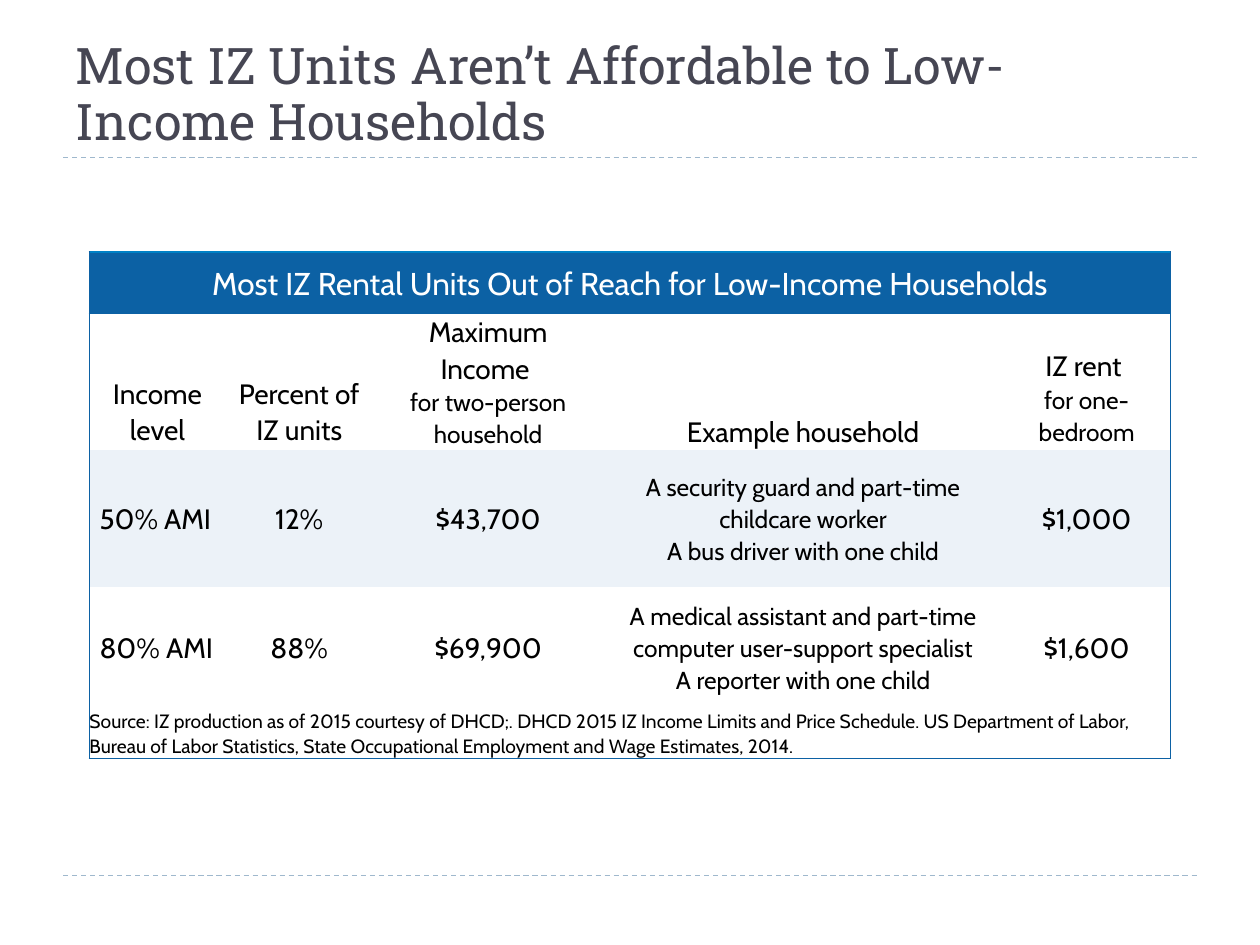
from lxml.etree import SubElement
from pptx import Presentation
from pptx.dml.color import RGBColor
from pptx.enum.dml import MSO_LINE
from pptx.enum.shapes import MSO_CONNECTOR
from pptx.enum.text import MSO_ANCHOR as Anchor, MSO_AUTO_SIZE, PP_ALIGN as Align
from pptx.oxml.ns import qn
from pptx.util import Inches, Pt

COLORS = {"title": "464653", "rule": "9FB8CD", "blue": "0C61A4", "top": "0081C6",
          "band": "ECF2F8", "text": "000000", "white": "FFFFFF"}
HEADLINE = "Most IZ Units Aren’t Affordable to Low-Income Households"
CAPTION = "Most IZ Rental Units Out of Reach for Low-Income Households"
SOURCE = ("Source: IZ production as of 2015 courtesy of DHCD;. DHCD 2015 IZ Income Limits "
          "and Price Schedule. US Department of Labor, Bureau of Labor Statistics, State "
          "Occupational Employment and Wage Estimates, 2014.")
HEADINGS = [
    [("Income level", 16)],
    [("Percent of IZ units", 16)],
    [("Maximum", 16), ("Income ", 16), ("for two-person household", 14)],
    [("Example household", 16)],
    [("IZ rent ", 16), ("for one-bedroom", 14)],
]
LEVELS = [
    ("50% AMI", "12%", "$43,700",
     ["A security guard and part-time childcare worker", "A bus driver with one child"],
     "$1,000"),
    ("80% AMI", "88%", "$69,900",
     ["A medical assistant and part-time computer user-support specialist",
      "A reporter with one child"],
     "$1,600"),
]
COLUMN_WIDTHS = [1.08, 1.17, 1.83, 3.17, 1.33]
ROW_HEIGHTS = [0.49, 0.66, 1.09, 0.96, 0.19]
LAST_COLUMN, LAST_ROW = len(COLUMN_WIDTHS) - 1, len(ROW_HEIGHTS) - 1
NONE, PADDED, SIDES = (0, 0), (0.08, 0.02), (0.08, 0)
HEADING_INSETS = [PADDED, PADDED, NONE, NONE, PADDED]
LEVEL_INSETS = [PADDED, PADDED, NONE, SIDES, PADDED]


def rgb(name):
    return RGBColor.from_string(COLORS[name])


def assign(target, values):
    for key, value in values.items():
        setattr(target, key, value)


def style_text(paragraph, text, size, color, font, **layout):
    assign(paragraph, layout)
    run = paragraph.add_run()
    run.text = text
    assign(run.font, {"size": Pt(size), "name": font})
    run.font.color.rgb = rgb(color)


def set_borders(cell, borders):
    properties = cell._tc.get_or_add_tcPr()
    for side in "LRTB":
        edge = SubElement(properties, qn(f"a:ln{side}"), w=str(Pt(1)))
        if side in borders:
            fill = SubElement(edge, qn("a:solidFill"))
            SubElement(fill, qn("a:srgbClr"), val=COLORS[borders[side]])
        else:
            SubElement(edge, qn("a:noFill"))


def fill_cell(cell, lines, insets=NONE, anchor=Anchor.MIDDLE, align=Align.CENTER,
              color="text"):
    across, down = map(Inches, insets)
    assign(cell, {"margin_left": across, "margin_right": across, "margin_top": down,
                  "margin_bottom": down, "vertical_anchor": anchor})
    for number, (text, size) in enumerate(lines):
        frame = cell.text_frame
        paragraph = frame.add_paragraph() if number else frame.paragraphs[0]
        style_text(paragraph, text, size, color, "Cabin",
                   alignment=align, line_spacing=1.07)


def frame_cell(cell, row, column):
    spans = row in (0, LAST_ROW)
    borders = {}
    if column == 0:
        borders["L"] = "blue"
    if column == LAST_COLUMN or spans:
        borders["R"] = "blue"
    if row < 2:
        borders["T"] = "blue" if row else "top"
    if spans:
        borders["B"] = "blue"
    set_borders(cell, borders)
    background = {0: "blue", 2: "band"}.get(row)
    if background:
        cell.fill.solid()
        cell.fill.fore_color.rgb = rgb(background)
    else:
        cell.fill.background()


def add_rule(slide, y):
    rule = slide.shapes.add_connector(MSO_CONNECTOR.STRAIGHT, Inches(0.5), Inches(y),
                                      Inches(9.5), Inches(y))
    assign(rule.line, {"width": Pt(0.75), "dash_style": MSO_LINE.DASH})
    rule.line.color.rgb = rgb("rule")
    SubElement(rule._element.spPr, qn("a:effectLst"))


def add_headline(slide):
    title = slide.shapes.title
    assign(title, {"left": Inches(0.5), "top": Inches(0.17),
                   "width": Inches(9), "height": Inches(1.08)})
    assign(title.text_frame, {"vertical_anchor": Anchor.BOTTOM, "word_wrap": True,
                              "auto_size": MSO_AUTO_SIZE.NONE})
    style_text(title.text_frame.paragraphs[0], HEADLINE, 28.8, "title", "Roboto Slab",
               alignment=Align.LEFT, line_spacing=0.92)


def add_rent_table(slide):
    table = slide.shapes.add_table(len(ROW_HEIGHTS), len(COLUMN_WIDTHS), Inches(0.71),
                                   Inches(2), Inches(8.58), Inches(4)).table
    assign(table, {"first_row": False, "horz_banding": False})
    for column, width in zip(table.columns, COLUMN_WIDTHS):
        column.width = Inches(width)
    for row, height in zip(table.rows, ROW_HEIGHTS):
        row.height = Inches(height)
    for row in range(LAST_ROW + 1):
        for column in range(LAST_COLUMN + 1):
            frame_cell(table.cell(row, column), row, column)
    for row in (0, LAST_ROW):
        table.cell(row, 0).merge(table.cell(row, LAST_COLUMN))

    fill_cell(table.cell(0, 0), [(CAPTION, 18)], color="white")
    for column, (lines, insets) in enumerate(zip(HEADINGS, HEADING_INSETS)):
        fill_cell(table.cell(1, column), lines, insets, Anchor.BOTTOM)
    for row, level in enumerate(LEVELS, 2):
        for column, (entry, insets) in enumerate(zip(level, LEVEL_INSETS)):
            lines = ([(entry, 16)] if isinstance(entry, str)
                     else [(household, 14) for household in entry])
            fill_cell(table.cell(row, column), lines, insets,
                      align=Align.CENTER if column else Align.LEFT)
    fill_cell(table.cell(LAST_ROW, 0), [(SOURCE, 11)], anchor=Anchor.TOP, align=Align.LEFT)


def main():
    deck = Presentation()
    assign(deck, {"slide_width": Inches(10), "slide_height": Inches(7.5)})
    slide = deck.slides.add_slide(deck.slide_layouts[5])
    for y in (6.95, 1.25):
        add_rule(slide, y)
    add_headline(slide)
    add_rent_table(slide)
    deck.save("out.pptx")


if __name__ == "__main__":
    main()
